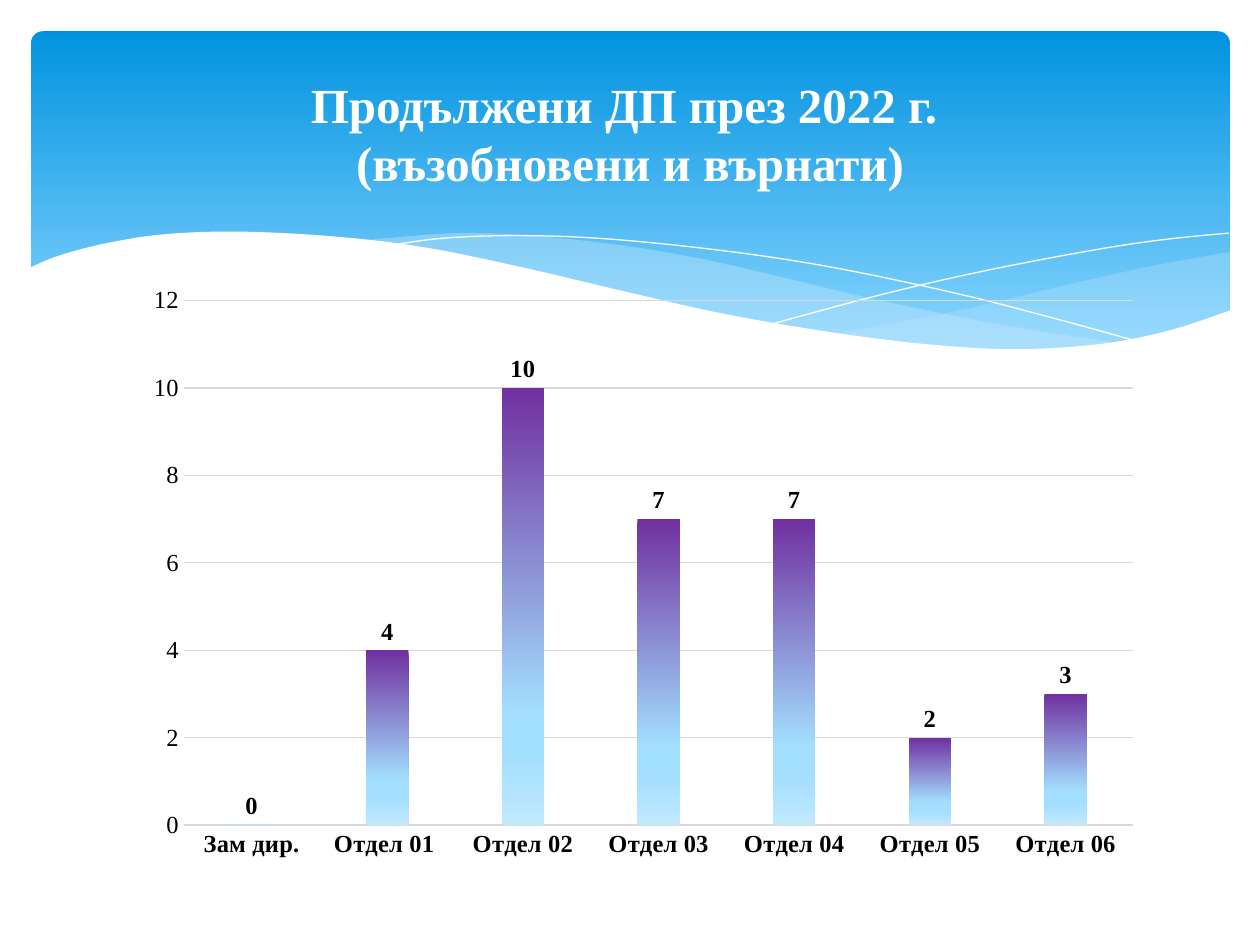
from lxml import etree
from pptx import Presentation
from pptx.chart.data import CategoryChartData
from pptx.dml.color import RGBColor
from pptx.enum.chart import XL_CHART_TYPE, XL_LABEL_POSITION, XL_TICK_MARK
from pptx.enum.shapes import MSO_SHAPE
from pptx.enum.text import MSO_ANCHOR, PP_ALIGN
from pptx.oxml.ns import qn
from pptx.util import Cm, Pt

COLUMNS = XL_CHART_TYPE.COLUMN_CLUSTERED
OUTSIDE_END = XL_LABEL_POSITION.OUTSIDE_END
NO_TICK = XL_TICK_MARK.NONE
ROUNDED = MSO_SHAPE.ROUNDED_RECTANGLE
MIDDLE = MSO_ANCHOR.MIDDLE
CENTER = PP_ALIGN.CENTER

WHITE = RGBColor(0xFF, 0xFF, 0xFF)
BLACK = RGBColor(0x00, 0x00, 0x00)
GRID = RGBColor(0xD9, 0xD9, 0xD9)
VEIL = RGBColor(0xC6, 0xE7, 0xFC)
SKY = RGBColor(0x02, 0x93, 0xE0)
LIGHT_SKY = RGBColor(0x83, 0xD3, 0xFE)
PURPLE = RGBColor(0x70, 0x30, 0xA0)
PALE_BLUE = RGBColor(0xA2, 0xDE, 0xFE)
PALEST_BLUE = RGBColor(0xC1, 0xE9, 0xFE)
FONT = "Times New Roman"

BANNER_STOPS = [(0, SKY), (90, LIGHT_SKY)]
COLUMN_STOPS = [(0, PURPLE), (74, PALE_BLUE), (83, PALE_BLUE), (100, PALEST_BLUE)]

RIGHT_VEIL_TOP = [(24.79, 5.08), (23.39, 5.33), (21.87, 5.66), (19.13, 6.3), (16.79, 6.73)]
RIGHT_VEIL_BOTTOM = [(16.79, 6.73), (18.26, 6.91), (19.84, 7.04), (21.21, 7.04),
                     (22.58, 6.91), (23.75, 6.65), (24.79, 6.27)]
LEFT_VEIL_TOP = [(22.68, 6.93), (20.5, 6.6), (17.93, 6.1), (15.98, 5.64), (14.1, 5.21),
                 (12.42, 4.93), (10.67, 4.75), (9.17, 4.7), (7.26, 4.85)]
LEFT_VEIL_BOTTOM = [(7.26, 4.85), (9.19, 5.16), (11.4, 5.64), (14.38, 6.3), (16.51, 6.71),
                    (18.34, 6.96), (20.22, 7.06), (22.68, 6.93)]
FALLING_LINE = [(7.85, 4.95), (8.97, 4.8), (10.57, 4.75), (12.42, 4.83), (14.78, 5.08),
                (16.89, 5.41), (19.3, 5.92), (21.11, 6.38), (23.04, 6.91)]
RISING_LINE = [(15.57, 6.53), (17.65, 5.97), (19.71, 5.49), (22, 5.05), (23.47, 4.83),
               (24.77, 4.7)]
WAVE_EDGE = [(24.82, 6.25), (23.62, 6.65), (22.23, 6.93), (20.55, 7.04), (18.9, 6.96),
             (16.97, 6.73), (14.71, 6.35), (12.78, 5.92), (10.62, 5.41), (8.64, 5),
             (6.88, 4.78), (4.9, 4.67), (3.35, 4.72), (2.16, 4.9), (1.17, 5.16), (0.58, 5.41)]
WAVE_BASE = [(0.58, 8.36), (24.82, 8.36)]

DEPARTMENTS = ["Зам дир.", "Отдел 01 ", "Отдел 02", "Отдел 03", "Отдел 04", "Отдел 05",
               "Отдел 06"]
CASES = [0, 4, 10, 7, 7, 2, 3]


def smooth_curve(knots, steps=6):
    """Return points of a Catmull-Rom curve through the knots."""
    padded = [knots[0], *knots, knots[-1]]
    points = []
    for before, start, end, after in zip(padded, padded[1:], padded[2:], padded[3:]):
        for step in range(steps):
            t = step / steps
            points.append(tuple(
                b + (c - a) * t / 2 + (2 * a - 5 * b + 4 * c - d) * t**2 / 2
                + (3 * b - a - 3 * c + d) * t**3 / 2
                for a, b, c, d in zip(before, start, end, after)))
    return points + [knots[-1]]


def fill_gradient(fill, element, stops):
    """Give a fill a top-to-bottom gradient with the given stops."""
    fill.gradient()
    fill.gradient_angle = 270
    stop_list = element.find(".//" + qn("a:gsLst"))
    for stop in list(stop_list):
        stop_list.remove(stop)
    for position, color in stops:
        stop = etree.SubElement(stop_list, qn("a:gs"), pos=str(position * 1000))
        etree.SubElement(stop, qn("a:srgbClr"), val=str(color))


def add_banner(slide):
    """Add the rounded blue banner."""
    banner = slide.shapes.add_shape(ROUNDED, Cm(0.63), Cm(0.63), Cm(24.16), Cm(6.86))
    banner.adjustments[0] = 0.034
    banner.shadow.inherit = False
    banner.line.fill.background()
    fill_gradient(banner.fill, banner.element, BANNER_STOPS)


def add_outline(slide, points, close):
    """Add a freeform through points given in centimetres."""
    points = [(Cm(x), Cm(y)) for x, y in points]
    builder = slide.shapes.build_freeform(*points[0])
    builder.add_line_segments(points[1:], close=close)
    outline = builder.convert_to_shape()
    outline.shadow.inherit = False
    return outline


def add_area(slide, points, color, opacity=100):
    """Add a closed area with an optional transparency."""
    area = add_outline(slide, points, True)
    area.line.fill.background()
    area.fill.solid()
    area.fill.fore_color.rgb = color
    if opacity < 100:
        color_node = area.element.spPr.find(qn("a:solidFill"))[0]
        etree.SubElement(color_node, qn("a:alpha"), val=str(opacity * 1000))


def add_curve(slide, knots):
    """Add a white hairline curve."""
    curve = add_outline(slide, smooth_curve(knots), False)
    curve.fill.background()
    curve.line.color.rgb = WHITE
    curve.line.width = Pt(0)


def format_font(font, size, color, bold):
    """Set the common font properties."""
    font.name = FONT
    font.size = Pt(size)
    font.color.rgb = color
    font.bold = bold


def format_line(line):
    """Draw a thin grey line."""
    line.color.rgb = GRID
    line.width = Pt(0.75)


def add_case_chart(slide):
    """Add the column chart of cases by department."""
    chart_data = CategoryChartData()
    chart_data.categories = DEPARTMENTS
    chart_data.add_series("Series 1", CASES)
    chart = slide.shapes.add_chart(
        COLUMNS, Cm(2.69), Cm(5.54), Cm(20.57), Cm(11.99), chart_data).chart
    chart.has_legend = False
    chart.has_title = False
    format_font(chart.font, 12, BLACK, False)

    for axis, bold in ((chart.category_axis, True), (chart.value_axis, False)):
        axis.major_tick_mark = axis.minor_tick_mark = NO_TICK
        format_font(axis.tick_labels.font, 14, BLACK, bold)
    format_line(chart.category_axis.format.line)
    value_axis = chart.value_axis
    value_axis.minimum_scale, value_axis.maximum_scale, value_axis.major_unit = 0, 12, 2
    value_axis.format.line.fill.background()
    format_line(value_axis.major_gridlines.format.line)

    plot = chart.plots[0]
    plot.gap_width, plot.overlap = 219, -27
    plot.vary_by_categories = False
    series = plot.series[0]
    fill_gradient(series.format.fill, series._element, COLUMN_STOPS)
    labels = series.data_labels
    labels.show_value = True
    labels.position = OUTSIDE_END
    format_font(labels.font, 14, BLACK, True)


def set_title(slide, text):
    """Fill the title placeholder and bring it to the front."""
    title = slide.shapes.title
    title.left, title.top, title.width, title.height = Cm(1.27), Cm(0.94), Cm(22.86), Cm(3.48)
    frame = title.text_frame
    frame.text = text
    frame.word_wrap = True
    frame.vertical_anchor = MIDDLE
    para = frame.paragraphs[0]
    para.alignment = CENTER
    for span in para.runs:
        format_font(span.font, 28, WHITE, True)
    title.element.getparent().append(title.element)


def main():
    """Build the slide and save the deck."""
    deck = Presentation()
    deck.slide_width, deck.slide_height = Cm(25.4), Cm(19.05)
    slide = deck.slides.add_slide(deck.slide_layouts[5])
    add_banner(slide)
    add_area(slide, smooth_curve(RIGHT_VEIL_TOP) + smooth_curve(RIGHT_VEIL_BOTTOM), VEIL, 29)
    add_area(slide, smooth_curve(LEFT_VEIL_TOP) + smooth_curve(LEFT_VEIL_BOTTOM), VEIL, 40)
    add_curve(slide, FALLING_LINE)
    add_curve(slide, RISING_LINE)
    add_area(slide, smooth_curve(WAVE_EDGE) + WAVE_BASE, WHITE)
    add_case_chart(slide)
    set_title(slide, "Продължени ДП през 2022 г. \v(възобновени и върнати)")
    deck.save("out.pptx")


if __name__ == "__main__":
    main()
